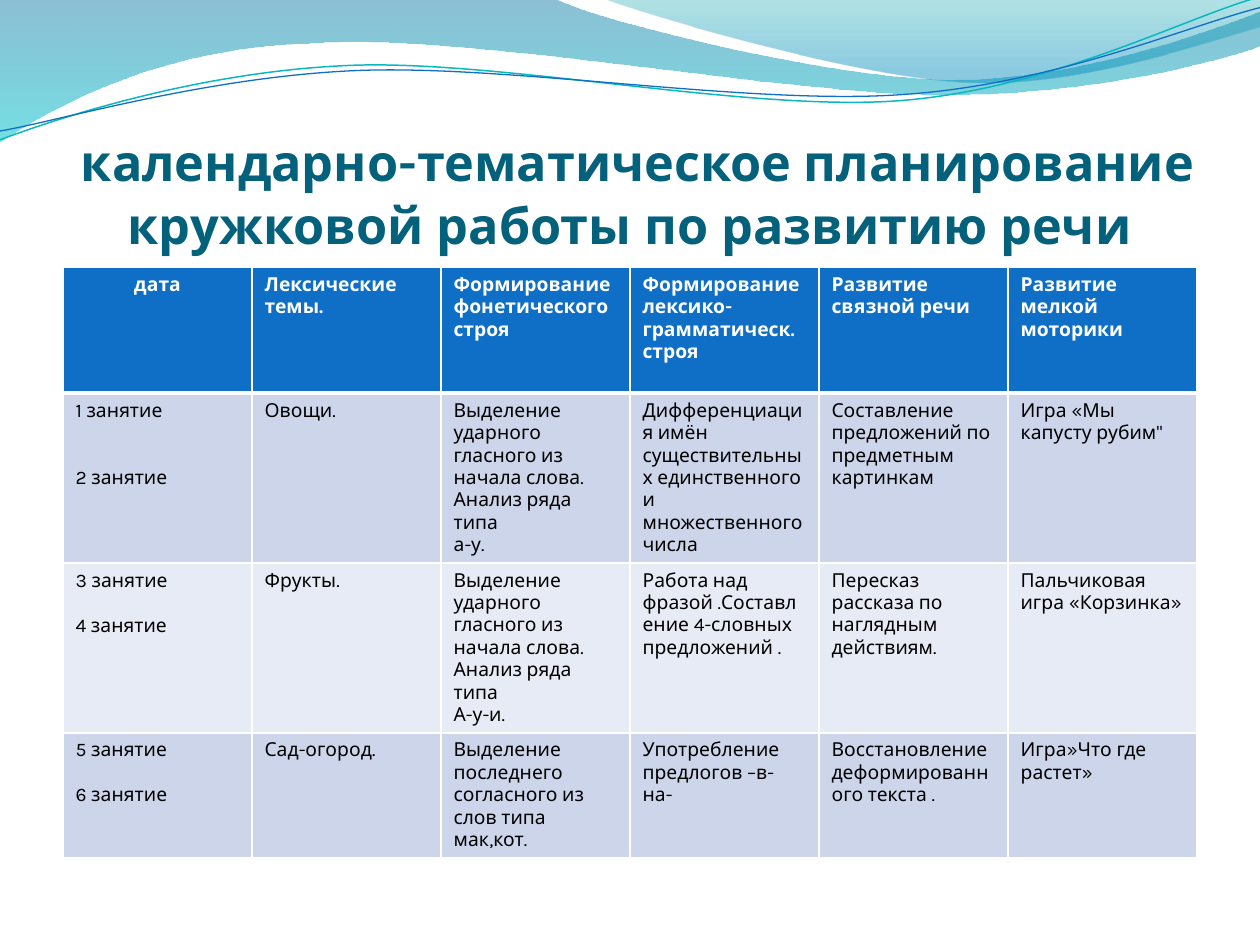
"""Build a slide with a speech-development lesson plan under a wave header."""
from math import cos, radians, sin
from lxml.etree import SubElement as Sub
from pptx import Presentation
from pptx.dml.color import RGBColor as Rgb
from pptx.enum.text import MSO_ANCHOR as Anchor, MSO_AUTO_SIZE as Fit, PP_ALIGN as Align
from pptx.oxml.ns import qn
from pptx.util import Inches, Pt

THEME = {
    "font": "Karla", "title": "04617B", "head": "0F6FC6", "light": "FFFFFF", "text": "000000",
    "bands": ("CCD5EA", "E7EBF5"), "lead": 36, "big": 28.8, "small": 11, "line": 12.86,
}
TITLE = "календарно-тематическое планирование кружковой работы по развитию речи"
VOWEL = "Выделение ударного гласного из начала слова. Анализ ряда типа"
HEAD = [
    ["дата"], ["Лексические темы."], ["Формирование", "фонетического строя"],
    ["Формирование лексико-", "грамматическ. строя"],
    ["Развитие связной речи"], ["Развитие мелкой моторики"],
]
BODY = [
    [["1 занятие", "2 занятие"], ["Овощи."], [VOWEL, "а-у."],
     ["Дифференциация имён существительных единственного и множественного числа"],
     ["Составление предложений по предметным картинкам"], ["Игра «Мы капусту рубим\""]],
    [["3 занятие", "4 занятие"], ["Фрукты."], [VOWEL, "А-у-и."],
     ["Работа над фразой .Составление 4-словных предложений ."],
     ["Пересказ рассказа по наглядным действиям."], ["Пальчиковая игра «Корзинка»"]],
    [["5 занятие", "6 занятие"], ["Сад-огород."],
     ["Выделение последнего согласного из слов типа мак,кот."],
     ["Употребление предлогов –в- на-"],
     ["Восстановление деформированного текста ."], ["Игра»Что где растет»"]],
]
GAPS = (2, 1, 1)
ROWS = (1, 1.27, 0.41, 0.41)
BOX = (0.5, 2.12, 9, 4.49)
TILT = 357.3
WAVES = [
    {"box": (-0.01, -0.01, 10.02, 1.14), "stops": ((0, "0074A1", 45), (1, "00C6CF", 55)),
     "steps": [(0, 0), (4.4, -0.01), (4.76, 0.17, 6.64, 0.63, 7.58, 0.63),
               (8.53, 0.63, 9.58, 0.26, 10, 0.09), (10.01, 0.36),
               (9.83, 0.44, 8.7, 0.76, 7.46, 0.75), (6.22, 0.75, 3.82, 0.28, 2.57, 0.34),
               (1.29, 0.36, 0.46, 0.83, -0.01, 1.13), (0, 0)]},
    {"box": (4.79, -0.01, 5.21, 0.7), "stops": ((0, "00A1A9", 30), (0.8, "008BBF", 45)),
     "steps": [(4.79, -0.01), (5.09, 0.11, 6.82, 0.62, 7.69, 0.65),
               (8.56, 0.69, 9.61, 0.32, 10, 0.21), (10, 0), (4.79, -0.01)]},
    {"box": (-0.02, 0.22, 10.02, 0.71), "line": ("0AB8BF", 0.85),
     "steps": [(0, 1.11), (0.48, 0.93, 1.58, 0.57, 2.77, 0.52),
               (3.95, 0.47, 5.93, 0.89, 7.13, 0.8), (8.33, 0.71, 9.38, 0.15, 9.98, -0.02)]},
    {"box": (-0.02, 0.3, 10.03, 0.58), "line": ("0F6FC6", 0.75),
     "steps": [(0, 1.04), (0.47, 0.96, 1.64, 0.61, 2.83, 0.56),
               (4.03, 0.51, 5.97, 0.84, 7.17, 0.75), (8.36, 0.67, 9.41, 0.21, 10, 0.06)]},
]


def hue(code):
    return Rgb.from_string(code)


def local(x, y, box, angle):
    left, top, wide, high = box
    dx, dy, turn = x - left - wide / 2, y - top - high / 2, radians(-angle)
    return (Inches(dx * cos(turn) - dy * sin(turn) + wide / 2),
            Inches(dx * sin(turn) + dy * cos(turn) + high / 2))


def draw(slide, box, steps, angle, close):
    ends = [(Inches(step[-2]), Inches(step[-1])) for step in steps]
    pen = slide.shapes.build_freeform(*ends[0])
    pen.add_line_segments(ends[1:], close=close)
    shape = pen.convert_to_shape()
    shape.left, shape.top, shape.width, shape.height = map(Inches, box)
    shape.rotation = angle
    track = shape._element.spPr.find(".//" + qn("a:path"))
    track.set("w", str(shape.width))
    track.set("h", str(shape.height))
    for node, step in zip(list(track), steps):
        curve = track.makeelement(qn("a:cubicBezTo") if len(step) == 6 else node.tag)
        for x, y in zip(step[::2], step[1::2]):
            px, py = local(x, y, box, angle)
            Sub(curve, qn("a:pt"), x=str(px), y=str(py))
        track.replace(node, curve)
    return shape


def add_wave(slide, wave):
    solid = "stops" in wave
    shape = draw(slide, wave["box"], wave["steps"], 0 if solid else TILT, solid)
    shape.shadow.inherit = False
    if not solid:
        shape.fill.background()
        code, width = wave["line"]
        shape.line.color.rgb, shape.line.width = hue(code), Pt(width)
        return
    shape.line.fill.background()
    shape.fill.gradient()
    shape.fill.gradient_angle = 270
    for stop, (place, code, _) in zip(shape.fill.gradient_stops, wave["stops"]):
        stop.position, stop.color.rgb = place, hue(code)
    tints = shape._element.spPr.find(qn("a:gradFill")).iter(qn("a:srgbClr"))
    for tint, (_, _, alpha) in zip(tints, wave["stops"]):
        Sub(tint, qn("a:alpha"), val=str(alpha * 1000))


def add_run(para, text, size, color, bold):
    run = para.add_run()
    run.text = text
    font = run.font
    font.name, font.size, font.bold, font.color.rgb = THEME["font"], Pt(size), bold, hue(color)


def set_title(slide):
    title = slide.shapes.title
    title.left, title.top, title.width, title.height = map(Inches, (0.5, 0.77, 9, 1.25))
    frame = title.text_frame
    frame.auto_size, frame.word_wrap, frame.vertical_anchor = Fit.NONE, True, Anchor.BOTTOM
    frame.margin_left = frame.margin_right = frame.margin_bottom = 0
    frame.margin_top = Inches(0.05)
    para = frame.paragraphs[0]
    para.alignment = Align.CENTER
    add_run(para, " ", THEME["lead"], THEME["title"], True)
    add_run(para, TITLE, THEME["big"], THEME["title"], True)
    slide.shapes._spTree.append(title._element)


def set_edges(cell, head):
    props = cell._tc.get_or_add_tcPr()
    for i, side in enumerate(("lnL", "lnR", "lnT", "lnB")):
        width = 3 if head and side == "lnB" else 1
        edge = props.makeelement(qn("a:" + side), {"w": str(Pt(width))})
        Sub(Sub(edge, qn("a:solidFill")), qn("a:srgbClr"), val=THEME["light"])
        props.insert(i, edge)


def fill_cell(cell, lines, fill, head, gap):
    cell.fill.solid()
    cell.fill.fore_color.rgb = hue(fill)
    set_edges(cell, head)
    frame = cell.text_frame
    for i, line in enumerate(lines):
        para = frame.add_paragraph() if i else frame.paragraphs[0]
        if i and gap:
            para.space_before = Pt(gap * THEME["line"])
        add_run(para, line, THEME["small"], THEME["light" if head else "text"], head)


def add_plan(slide):
    holder = slide.shapes.add_table(len(ROWS), len(HEAD), *map(Inches, BOX))
    table = holder.table
    for r, cells in enumerate([HEAD] + BODY):
        table.rows[r].height = Inches(ROWS[r])
        fill = THEME["bands"][(r - 1) % 2] if r else THEME["head"]
        for c, lines in enumerate(cells):
            gap = GAPS[r - 1] if r and c == 0 else 0
            fill_cell(table.cell(r, c), lines, fill, r == 0, gap)
    table.cell(0, 0).text_frame.paragraphs[0].alignment = Align.CENTER
    holder.height = Inches(BOX[3])


def main():
    deck = Presentation()
    deck.slide_width, deck.slide_height = Inches(10), Inches(7.5)
    slide = deck.slides.add_slide(deck.slide_layouts[5])
    for wave in WAVES:
        add_wave(slide, wave)
    set_title(slide)
    add_plan(slide)
    deck.save("out.pptx")


if __name__ == "__main__":
    main()
